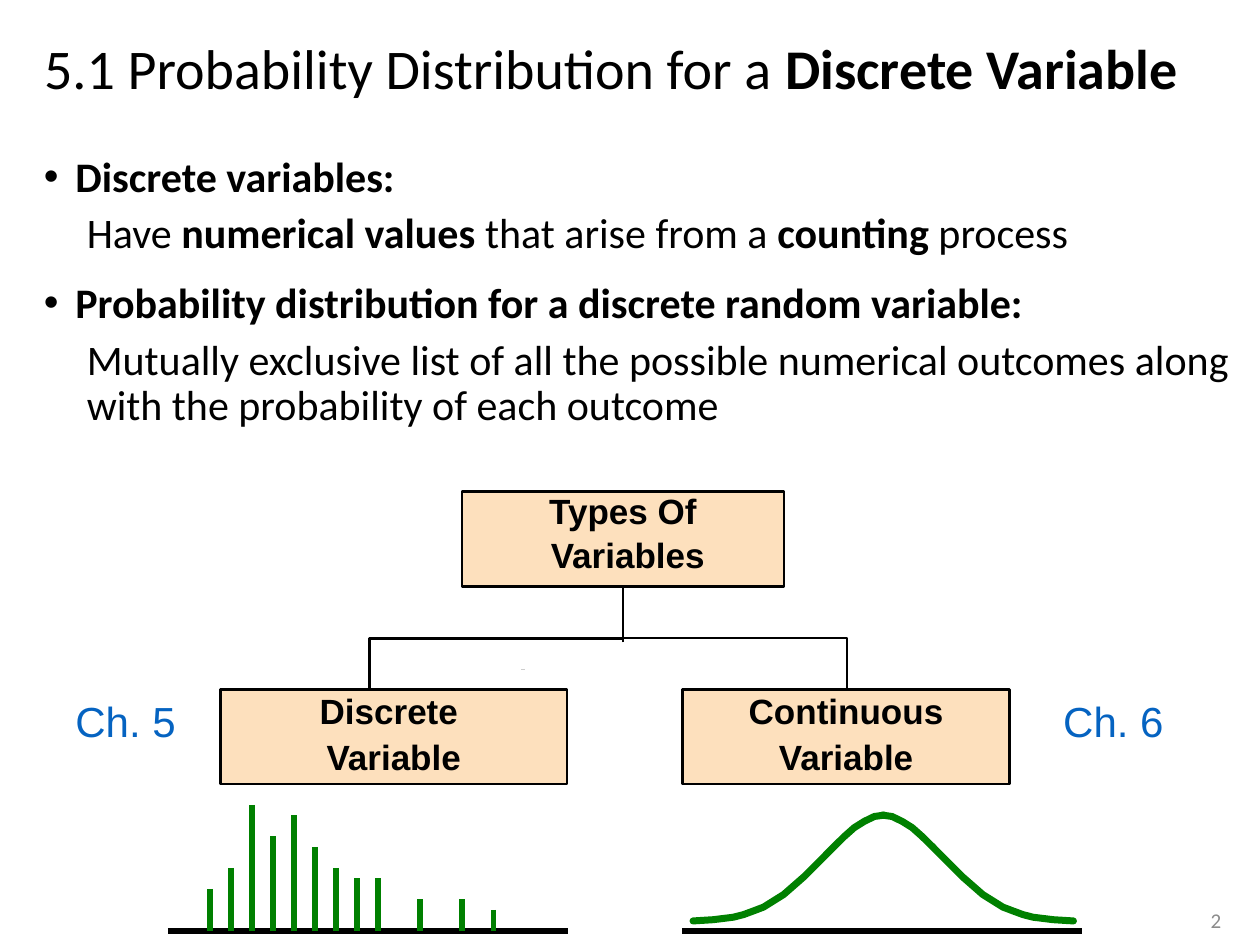
from lxml import etree
from pptx import Presentation
from pptx import util as u
from pptx.dml import color
from pptx.enum import shapes, text
from pptx.oxml import ns

Pt = u.Pt
rgb = color.RGBColor.from_string
LEFT, CENTER, RIGHT = text.PP_ALIGN.LEFT, text.PP_ALIGN.CENTER, text.PP_ALIGN.RIGHT
MIDDLE = text.MSO_ANCHOR.MIDDLE


def write(tf, paras, font, para=None, frame=None):
    """Write paragraphs, each a list of (text, bold) runs."""
    for name, value in {"word_wrap": True, **(frame or {})}.items():
        setattr(tf, name, value)
    for i, runs in enumerate(paras):
        p = tf.paragraphs[0] if i == 0 else tf.add_paragraph()
        for name, value in (para or {}).items():
            setattr(p, name, value)
        for words, bold in runs:
            r = p.add_run()
            r.text = words
            r.font.bold = bold
            r.font.name, size, hex_color = font
            r.font.size = Pt(size)
            r.font.color.rgb = rgb(hex_color)


def connect(kind, x1, y1, x2, y2, hex_color, width):
    cn = s.shapes.add_connector(kind, Pt(x1), Pt(y1), Pt(x2), Pt(y2))
    cn.line.color.rgb = rgb(hex_color)
    cn.line.width = Pt(width)
    etree.SubElement(cn._element.spPr, ns.qn("a:effectLst"))
    return cn


prs = Presentation()
prs.slide_width, prs.slide_height = Pt(720), Pt(540)
s = prs.slides.add_slide(prs.slide_layouts[5])
STRAIGHT, ELBOW = shapes.MSO_CONNECTOR.STRAIGHT, shapes.MSO_CONNECTOR.ELBOW
BLACK, GREEN, PEACH = "000000", "008000", "FDE0BD"

# Title
title = s.shapes.title
box = {"left": 18, "top": 0, "width": 686, "height": 81}
for name, value in box.items():
    setattr(title, name, Pt(value))
write(title.text_frame,
      [[("5.1 Probability Distribution for a ", False), ("Discrete Variable", True)]],
      ("Calibri", 32, BLACK), {"alignment": LEFT, "line_spacing": 0.9},
      {"vertical_anchor": MIDDLE, "auto_size": text.MSO_AUTO_SIZE.NONE})

# Bulleted terms, spaced to leave room for their definitions
terms = s.shapes.add_textbox(Pt(18), Pt(85.5), Pt(686), Pt(171.5)).text_frame
write(terms,
      [[("Discrete variables:", True)],
       [("Probability distribution for a discrete random variable:", True)]],
      ("Calibri", 24, BLACK), {"line_spacing": 0.9, "space_before": Pt(46.4)})
for p in terms.paragraphs:
    pPr = p._p.get_or_add_pPr()
    pPr.set("marL", str(Pt(18)))
    pPr.set("indent", str(-Pt(18)))
    etree.SubElement(pPr, ns.qn("a:buFont")).set("typeface", "Arial")
    etree.SubElement(pPr, ns.qn("a:buChar")).set("char", "•")

# Definitions
definitions = s.shapes.add_textbox(Pt(42.5), Pt(81.5), Pt(686), Pt(175.5)).text_frame
write(definitions,
      [[("Have ", False), ("numerical values ", True), ("that arise from a ", False),
        ("counting", True), (" process", False)],
       [("Mutually exclusive list of all the possible numerical outcomes along "
         "with the probability of each outcome", False)]],
      ("Calibri", 24, BLACK), {"line_spacing": 0.9, "space_before": Pt(46.4)},
      {"margin_top": Pt(40)})

# Slide number
number = s.shapes.add_textbox(Pt(543), Pt(511), Pt(162), Pt(29))
write(number.text_frame, [[("2", False)]], ("Calibri", 12, "8C8C8C"),
      {"alignment": RIGHT}, {"vertical_anchor": MIDDLE})

# Tree boxes
for x, y, w, lines, first_spacing in [
        (264, 281, 184, ("Types Of", " Variables"), 0.6),
        (126, 394, 198, ("Discrete ", "Variable"), 0.8),
        (390, 394, 187, ("Continuous", "Variable"), 0.8)]:
    sp = s.shapes.add_shape(shapes.MSO_SHAPE.RECTANGLE, Pt(x), Pt(y), Pt(w), Pt(54))
    sp.shadow.inherit = False
    sp.fill.solid()
    sp.fill.fore_color.rgb = rgb(PEACH)
    sp.line.color.rgb = rgb(BLACK)
    sp.line.width = Pt(1.5)
    write(sp.text_frame, [[(words, True)] for words in lines], ("Arial", 20, BLACK),
          {"alignment": CENTER, "line_spacing": 0.6, "space_before": Pt(11)},
          {"vertical_anchor": MIDDLE})
    sp.text_frame.paragraphs[0].line_spacing = first_spacing

# Tree branches: elbows turned so that they leave downwards
for x1, y1, x2, y2, bend in [(356, 367, 211, 393.5, -8500),
                             (356, 335, 484, 394, 50000)]:
    w, h = y2 - y1, abs(x2 - x1)
    left, top = (x1 + x2 - w) / 2, (y1 + y2 - h) / 2
    to_left = x2 < x1
    ends = (left, left + w) if to_left else (left + w, left)
    cn = connect(ELBOW, ends[0], top, ends[1], top + h, BLACK, 1.5)
    cn._element.spPr.xfrm.set("rot", str((90 if to_left else 270) * 60000))
    gd = etree.SubElement(cn._element.spPr.find(".//" + ns.qn("a:avLst")), ns.qn("a:gd"))
    gd.set("name", "adj1")
    gd.set("fmla", f"val {bend}")
connect(STRAIGHT, 298.8, 382.3, 298.8, 383, "CDCDCD", 2)

# Continuous distribution: half a bell curve and its mirror image
BASE = 532
connect(STRAIGHT, 390, BASE, 618.5, BASE, BLACK, 3)
steps = [0, 2, 3, 4, 5, 6, 7, 9, 11, 13, 14, 15, 16, 17, 18, 19]
heights = [526.3, 525.6, 524.9, 524.2, 522.7, 520.6, 518.4, 511.2,
           501.1, 489.6, 483.8, 478.1, 473, 469.4, 466.6, 465.8]
for start, direction in [(613.4, -1), (396, 1)]:
    points = [(Pt(start + direction * 5.76 * k), Pt(y)) for k, y in zip(steps, heights)]
    fb = s.shapes.build_freeform(*points[0])
    fb.add_line_segments(points[1:], close=False)
    curve = fb.convert_to_shape()
    curve.shadow.inherit = False
    curve.fill.background()
    curve.line.color.rgb = rgb(GREEN)
    curve.line.width = Pt(4)
    curve._element.spPr.find(ns.qn("a:ln")).set("cap", "rnd")

# Discrete distribution
connect(STRAIGHT, 96, BASE, 324.5, BASE, BLACK, 3)
bars = {120: 24, 132: 36, 144: 72, 156: 54, 168: 66, 180: 48,
        192: 36, 204: 30, 216: 30, 240: 18, 264: 18, 282: 12}
for x, height in bars.items():
    connect(STRAIGHT, x, BASE - height, x, BASE, GREEN, 3)

# Chapter labels
for x, label in [(36, "Ch. 5"), (600.5, "Ch. 6")]:
    sp = s.shapes.add_textbox(Pt(x), Pt(394), Pt(72), Pt(36))
    write(sp.text_frame, [[(label, False)]], ("Arial", 24, "0563C1"),
          frame={"word_wrap": False})

prs.save("out.pptx")
